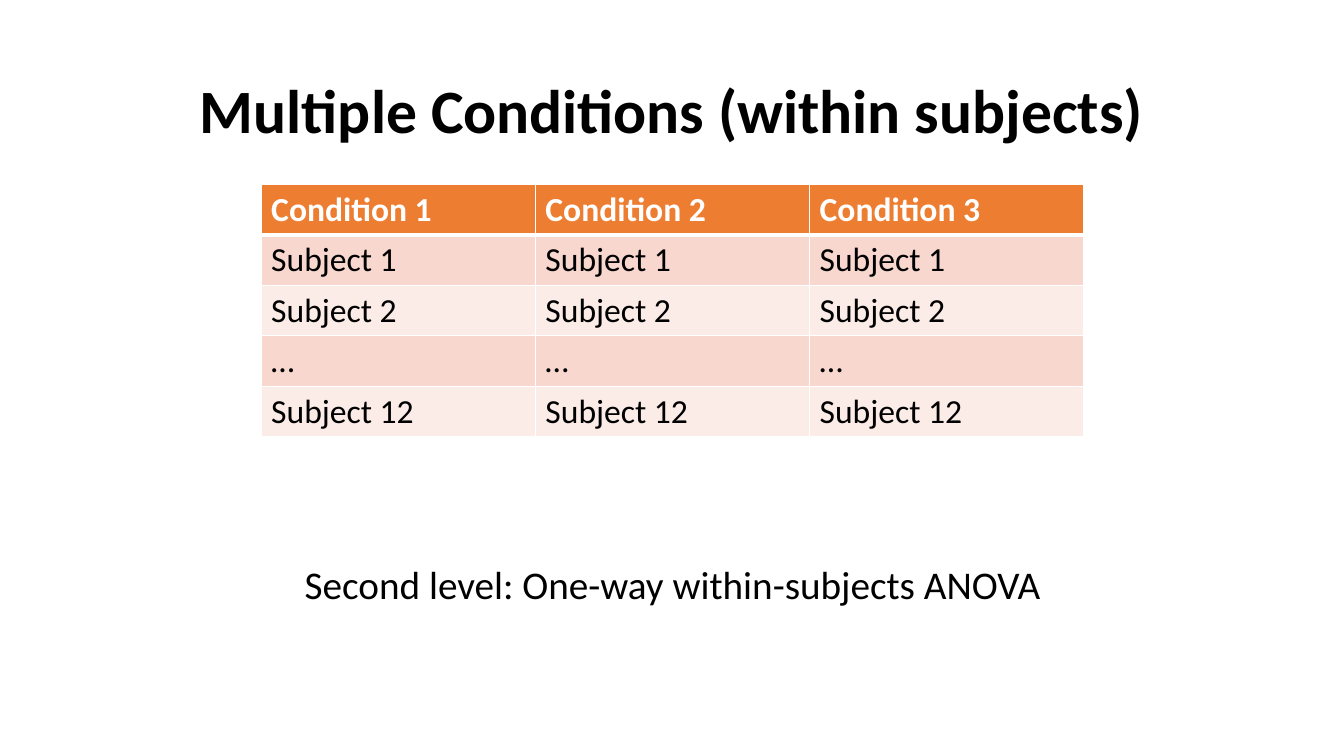
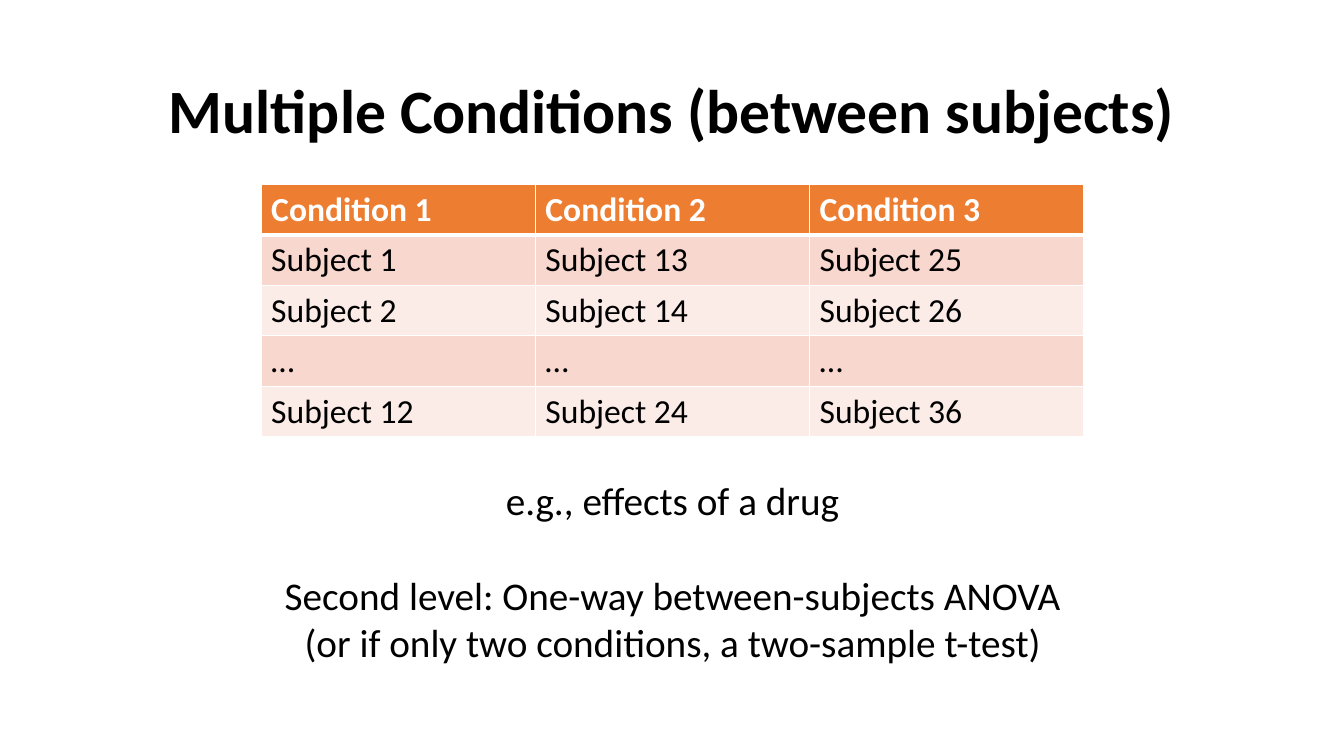
"""Build two slides comparing within- and between-subjects designs."""
from lxml.etree import SubElement
from pptx import Presentation
from pptx.dml.color import RGBColor
from pptx.enum.text import MSO_ANCHOR as Anchor, PP_ALIGN as Align
from pptx.oxml.ns import qn
from pptx.util import Inches, Pt

BLACK = RGBColor(0x00, 0x00, 0x00)
WHITE = RGBColor(0xFF, 0xFF, 0xFF)
ORANGE = RGBColor(0xED, 0x7D, 0x31)
BANDS = (RGBColor(0xF8, 0xD7, 0xCE), RGBColor(0xFC, 0xEC, 0xE8))

TITLE_FONT = {"name": "Calibri", "size": Pt(44), "bold": True}
NOTE_FONT = {"name": "Calibri", "size": Pt(28), "bold": False}
HEADER_FONT = {"name": "Calibri", "size": Pt(24), "bold": True}
SUBJECT_FONT = {**HEADER_FONT, "bold": False}

TITLE_BOX = (0.92, 0.4, 11.5, 1.45)
TABLE_BOX = (2.59, 1.83, 8.16, 2.5)
CONCLUSION_GAP = Pt(34)
RULE, HEADER_RULE = Pt(1), Pt(3)

CONDITIONS = ("Condition 1", "Condition 2", "Condition 3")
DESIGNS = [
    {
        "title": "Multiple Conditions (within subjects)",
        "subjects": [
            ("Subject 1", "Subject 1", "Subject 1"),
            ("Subject 2", "Subject 2", "Subject 2"),
            ("…", "…", "…"),
            ("Subject 12", "Subject 12", "Subject 12"),
        ],
        "notes": [["Second level: One-way within-subjects ANOVA"]],
        "notes_box": (2.42, 4.67, 8.5, 2.25),
    },
    {
        "title": "Multiple Conditions (between subjects)",
        "subjects": [
            ("Subject 1", "Subject 13", "Subject 25"),
            ("Subject 2", "Subject 14", "Subject 26"),
            ("…", "…", "…"),
            ("Subject 12", "Subject 24", "Subject 36"),
        ],
        "notes": [
            ["e.g., effects of a drug"],
            ["Second level: One-way between-subjects ANOVA",
             "(or if only two conditions, a two-sample t-test)"],
        ],
        "notes_box": (2.42, 4.5, 8.5, 2.33),
    },
]


def inches(box):
    """Convert a box to slide lengths."""
    return [Inches(length) for length in box]


def add_text(paragraph, text, style, color=BLACK):
    """Append a formatted run to a paragraph."""
    run = paragraph.add_run()
    run.text = text
    for attribute, value in style.items():
        setattr(run.font, attribute, value)
    run.font.color.rgb = color


def add_title(slide, text):
    """Place and format the slide title."""
    title = slide.shapes.title
    title.left, title.top, title.width, title.height = inches(TITLE_BOX)
    title.text_frame.vertical_anchor = Anchor.MIDDLE
    paragraph = title.text_frame.paragraphs[0]
    paragraph.alignment, paragraph.line_spacing = Align.CENTER, 0.9
    add_text(paragraph, text, TITLE_FONT)


def add_notes(slide, notes, box):
    """Add the centred remarks below the table."""
    frame = slide.shapes.add_textbox(*inches(box)).text_frame
    frame.word_wrap = True
    frame.vertical_anchor = Anchor.MIDDLE
    for index, lines in enumerate(notes):
        paragraph = frame.add_paragraph() if index else frame.paragraphs[0]
        paragraph.alignment = Align.CENTER
        if index:
            paragraph.space_before = CONCLUSION_GAP
        for line_index, line in enumerate(lines):
            if line_index:
                paragraph.add_line_break()
            add_text(paragraph, line, NOTE_FONT)


def add_borders(cell, top, bottom):
    """Draw white rules around a cell."""
    properties = cell._tc.get_or_add_tcPr()
    for side, width in (("L", RULE), ("R", RULE), ("T", top), ("B", bottom)):
        line = SubElement(properties, qn(f"a:ln{side}"), w=str(width))
        fill = SubElement(line, qn("a:solidFill"))
        SubElement(fill, qn("a:srgbClr"), val=str(WHITE))


def add_subject_table(slide, subjects):
    """Add the table of subjects by condition."""
    rows = [CONDITIONS, *subjects]
    table = slide.shapes.add_table(
        len(rows), len(CONDITIONS), *inches(TABLE_BOX)).table
    for row, texts in enumerate(rows):
        is_header = row == 0
        style = HEADER_FONT if is_header else SUBJECT_FONT
        top = HEADER_RULE if row == 1 else RULE
        bottom = HEADER_RULE if is_header else RULE
        for column, text in enumerate(texts):
            cell = table.cell(row, column)
            add_borders(cell, top, bottom)
            cell.fill.solid()
            cell.fill.fore_color.rgb = ORANGE if is_header else BANDS[(row - 1) % 2]
            add_text(cell.text_frame.paragraphs[0], text, style,
                     WHITE if is_header else BLACK)


def main():
    """Build and save the presentation."""
    deck = Presentation()
    deck.slide_width, deck.slide_height = Inches(13.33), Inches(7.5)
    title_only = deck.slide_layouts[5]
    for design in DESIGNS:
        slide = deck.slides.add_slide(title_only)
        add_notes(slide, design["notes"], design["notes_box"])
        add_title(slide, design["title"])
        add_subject_table(slide, design["subjects"])
    deck.save("out.pptx")


if __name__ == "__main__":
    main()
